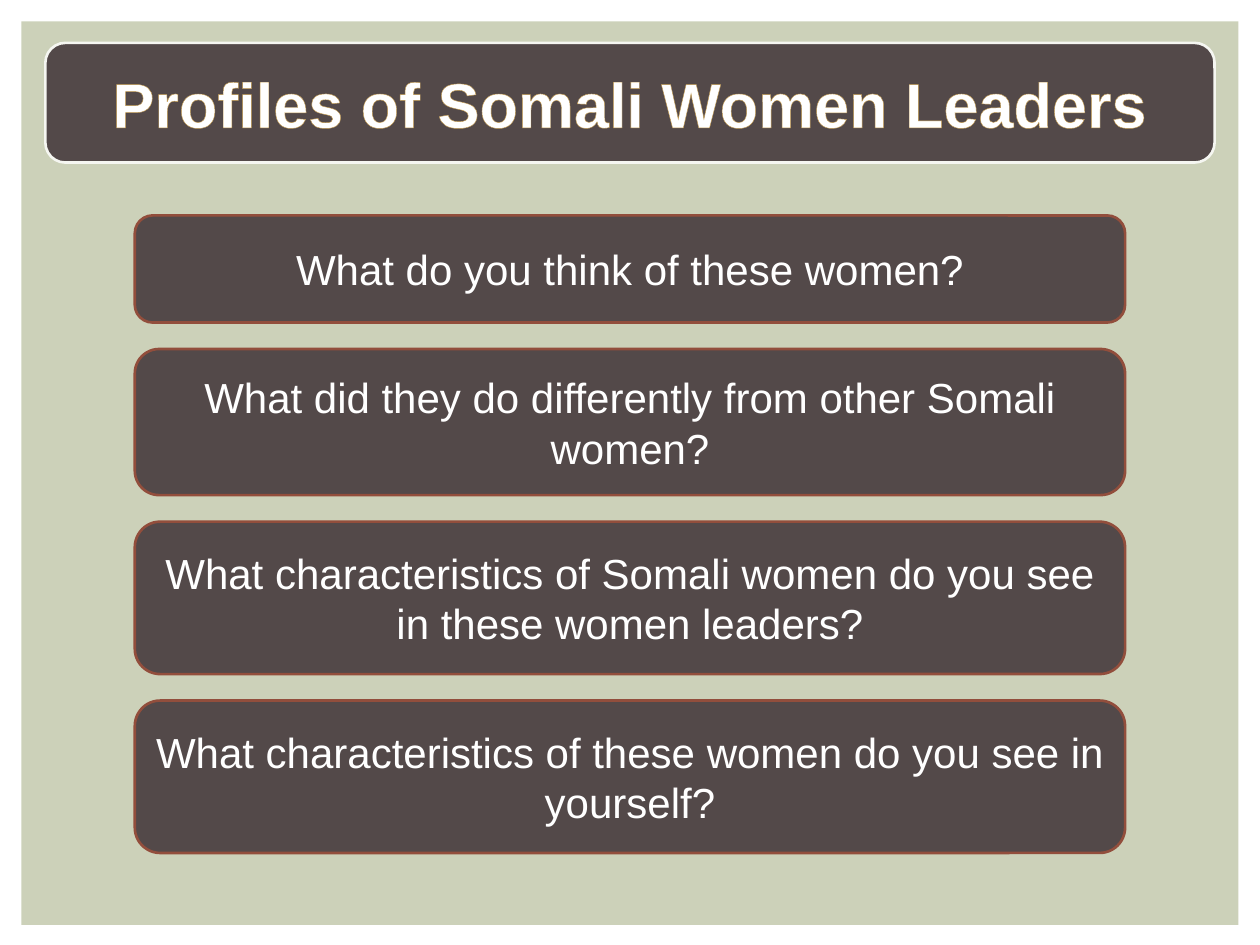
from lxml import etree
from pptx import Presentation
from pptx.dml.color import RGBColor
from pptx.enum import shapes, text
from pptx.oxml.ns import qn
from pptx.util import Inches, Pt

DARK = "534949"
WHITE = "FFFFFF"
QUESTIONS = [
    ("What do you think of these women?", 0.85),
    ("What did they do differently from other Somali women?", 1.16),
    ("What characteristics of Somali women do you see in these women leaders?", 1.21),
    ("What characteristics of these women do you see in yourself?", 1.21),
]


def color(hex_value):
    return RGBColor.from_string(hex_value)


def add_box(s, kind, box, fill, line=None):
    sp = s.shapes.add_shape(kind, *(Inches(v) for v in box))
    sp.shadow.inherit = False
    sp.fill.solid()
    sp.fill.fore_color.rgb = color(fill)
    if line:
        sp.line.color.rgb = color(line)
        sp.line.width = Pt(1.5)
    else:
        sp.line.fill.background()
    return sp


def add_card(s, box, words, size, line, bold=False):
    sp = add_box(s, shapes.MSO_SHAPE.ROUNDED_RECTANGLE, box, DARK, line)
    tf = sp.text_frame
    tf.word_wrap = True
    tf.vertical_anchor = text.MSO_ANCHOR.MIDDLE
    tf.margin_left = tf.margin_right = Inches(0.06)
    p = tf.paragraphs[0]
    p.alignment = text.PP_ALIGN.CENTER
    r = p.add_run()
    r.text = words
    r.font.name = "Arial"
    r.font.size = Pt(size)
    r.font.bold = bold
    r.font.color.rgb = color(WHITE)
    return r


def outline_text(r, hex_value, width):
    ln = etree.Element(qn("a:ln"), w=str(Pt(width)))
    fill = etree.SubElement(ln, qn("a:solidFill"))
    etree.SubElement(fill, qn("a:srgbClr"), val=hex_value)
    r.font._element.insert(0, ln)


def add_title(s, box):
    r = add_card(s, box, "Profiles of Somali Women Leaders", 36, "F5F6F1", True)
    outline_text(r, "BF974D", 0.52)


def add_questions(s, left, top, width, gap):
    for words, height in QUESTIONS:
        add_card(s, (left, top, width, height), words, 24, "924E3C")
        top += height + gap


def main():
    prs = Presentation()
    prs.slide_width, prs.slide_height = Inches(10), Inches(7.5)
    s = prs.slides.add_slide(prs.slide_layouts[6])
    add_box(s, shapes.MSO_SHAPE.RECTANGLE, (0.17, 0.17, 9.66, 7.17), "CCD1B9")
    add_title(s, (0.36, 0.34, 9.28, 0.95))
    add_questions(s, 1.07, 1.71, 7.86, 0.21)
    prs.save("out.pptx")


if __name__ == "__main__":
    main()
